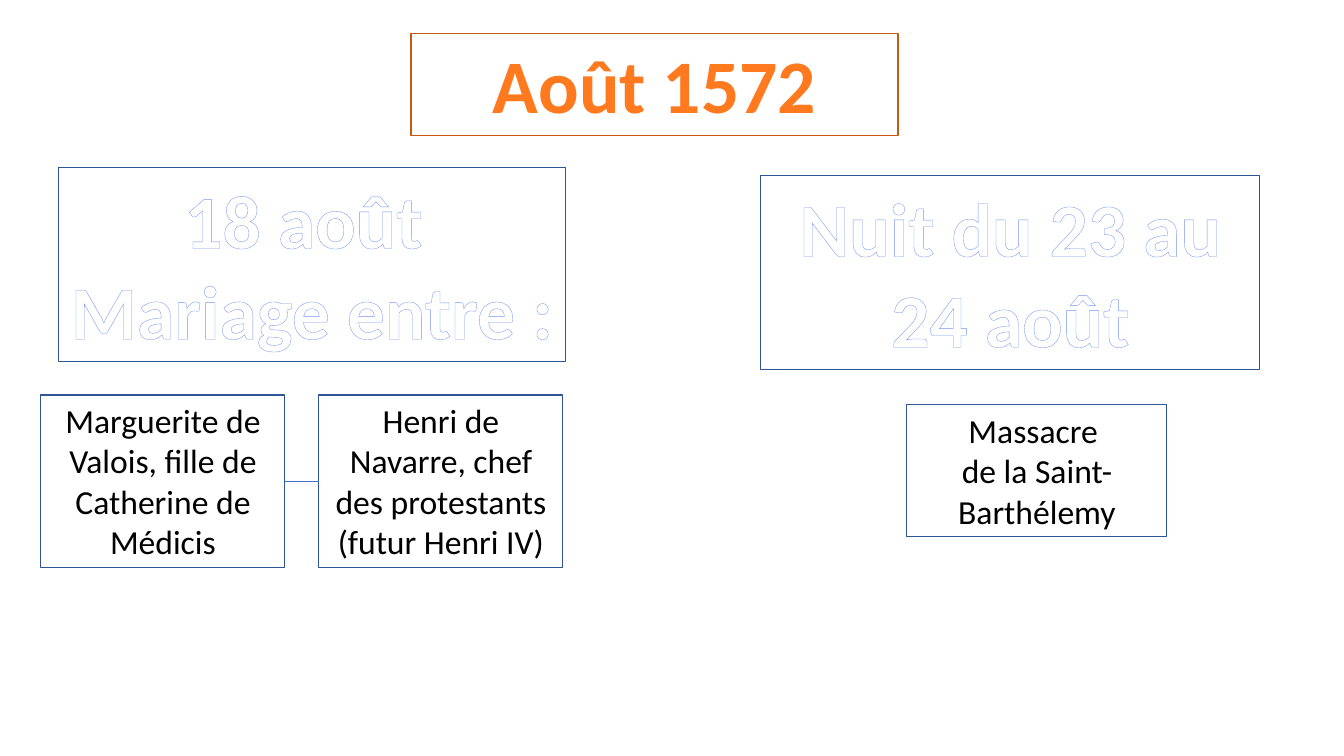
import pptx
import pptx.dml.color
import pptx.enum.shapes
import pptx.enum.text
import pptx.oxml
import pptx.oxml.ns
import pptx.util
import lxml.etree

PX = 914400 / 100.8
COLORS = {
    "title_border": "C55A11",
    "title_outline": "FF7A1F",
    "border": "2F5597",
    "date_fill": "FFFFFF",
    "date_outline": "7797F2",
    "text": "000000",
    "link": "4472C4",
}
TITLE = {"name": "Calibri", "size": pptx.util.Pt(54), "bold": True}
DATE = TITLE
BODY = {"name": "Calibri", "size": pptx.util.Pt(24), "bold": False}


def px(length):
    return pptx.util.Emu(round(length * PX))


def rgb(name):
    return pptx.dml.color.RGBColor.from_string(COLORS[name])


def outline_text(run, color, width):
    ln = pptx.oxml.parse_xml(
        f'<a:ln {pptx.oxml.ns.nsdecls("a")} w="{pptx.util.Pt(width)}"><a:solidFill>'
        f'<a:srgbClr val="{COLORS[color]}"/></a:solidFill></a:ln>')
    run._r.get_or_add_rPr().insert(0, ln)


def fill_frame(frame, box, lines, font, border="border", color=None, outline=None, wrap=True):
    """Place a bordered frame and write its centred lines."""
    for side, length in zip(("left", "top", "width", "height"), box):
        setattr(frame, side, px(length))
    frame.line.color.rgb = rgb(border)
    frame.line.width = pptx.util.Pt(0.75)
    text = frame.text_frame
    text.word_wrap = wrap
    text.auto_size = pptx.enum.text.MSO_AUTO_SIZE.SHAPE_TO_FIT_TEXT
    text.vertical_anchor = pptx.enum.text.MSO_ANCHOR.TOP
    for index, line in enumerate(lines):
        paragraph = text.add_paragraph() if index else text.paragraphs[0]
        paragraph.alignment = pptx.enum.text.PP_ALIGN.CENTER
        run = paragraph.add_run()
        run.text = line
        for key, value in font.items():
            setattr(run.font, key, value)
        if color:
            run.font.color.rgb = rgb(color)
        else:
            run.font.fill.background()
        if outline:
            outline_text(run, *outline)


def add_frame(slide, box, lines, font, **formats):
    frame = slide.shapes.add_textbox(0, 0, 0, 0)
    fill_frame(frame, box, lines, font, **formats)
    return frame


def add_date(slide, box, lines, wrap=True):
    add_frame(slide, box, lines, DATE, color="date_fill",
              outline=("date_outline", 2.48), wrap=wrap)


def add_title(slide, box):
    fill_frame(slide.shapes.title, box, ["Août 1572"], TITLE,
               border="title_border", outline=("title_outline", 1.42))


def add_marriage(slide, left, top):
    # Date and event
    add_date(slide, (left + 17, top, 508, 194), ["18 août ", "Mariage entre :"], wrap=False)

    # The couple, side by side
    spouses = ["Marguerite de Valois, fille de Catherine de Médicis",
               "Henri de Navarre, chef des protestants (futur Henri IV)"]
    bride, groom = [
        add_frame(slide, (left + 278 * column, top + 227, 244, 173), [spouse], BODY, color="text")
        for column, spouse in enumerate(spouses)]

    # Link between the spouses
    union = slide.shapes.add_connector(pptx.enum.shapes.MSO_CONNECTOR.STRAIGHT, 0, 0, 0, 0)
    union.begin_connect(bride, 3)
    union.end_connect(groom, 1)
    union.line.color.rgb = rgb("link")
    union.line.width = pptx.util.Pt(0.5)
    lxml.etree.SubElement(union._element.spPr, pptx.oxml.ns.qn("a:effectLst"))


def add_massacre(slide, left, top):
    add_date(slide, (left, top, 499, 194), ["Nuit du 23 au 24 août"])
    add_frame(slide, (left + 146, top + 229, 260, 132),
              ["Massacre ", "de la Saint-Barthélemy"], BODY, color="text")


def main():
    deck = pptx.Presentation()
    deck.slide_width, deck.slide_height = px(1344), px(756)
    slide = deck.slides.add_slide(deck.slide_layouts[5])
    add_title(slide, (411, 33, 487, 102))
    add_marriage(slide, 41, 168)
    add_massacre(slide, 761, 176)
    deck.save("out.pptx")


if __name__ == "__main__":
    main()
